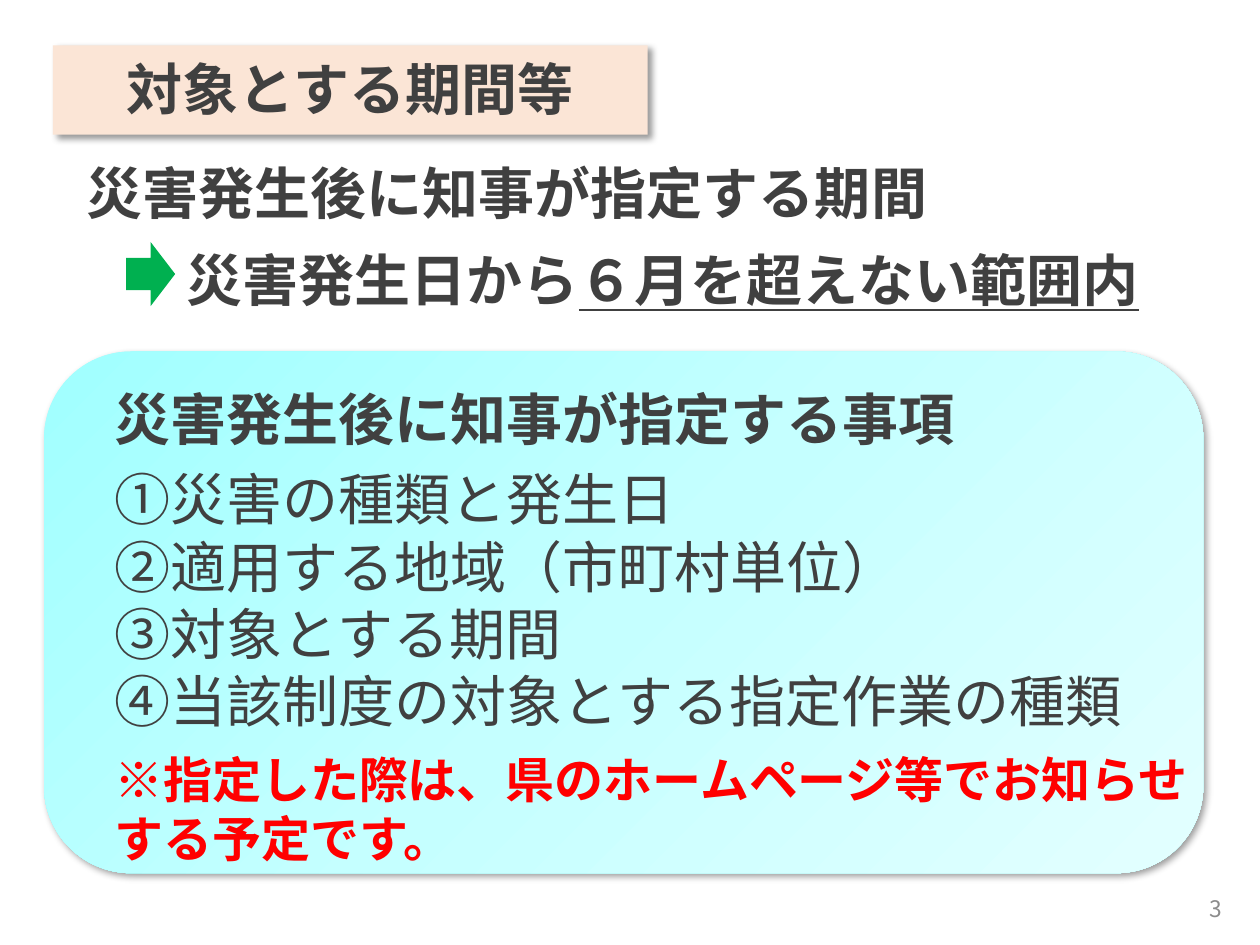
import copy
from dataclasses import dataclass

from lxml import etree
from pptx import Presentation
from pptx import util as u
from pptx.dml.color import RGBColor
from pptx.enum import shapes, text
from pptx.oxml.ns import qn


@dataclass(frozen=True)
class Theme:
    font: str = "Noto Sans CJK JP"
    ink: str = "404040"
    alert: str = "FF0000"
    muted: str = "8C8C8C"
    heading_fill: str = "FBE5D6"
    arrow_fill: str = "00B050"
    panel_stops: tuple = ((0, "A0FFFF"), (0.5, "C5FFFF"), (1, "E3FFFF"))
    large: int = 32
    note: int = 28
    small: int = 13
    leading: float = 1.2


THEME = Theme()

# Content: a paragraph is a list of (words, underlined) runs
HEADING = [[("対象とする期間等", False)]]
PERIOD = [[("災害発生後に知事が指定する期間", False)]]
LIMIT = [[("災害発生日から", False), ("６月を超えない範囲内", True)]]
MATTERS_TITLE = [[("災害発生後に知事が指定する事項", False)]]
MATTERS = [[(item, False)] for item in (
    "①災害の種類と発生日",
    "②適用する地域（市町村単位）",
    "③対象とする期間",
    "④当該制度の対象とする指定作業の種類",
)]
NOTE = [[("※指定した際は、県のホームページ等でお知らせする予定です。", False)]]
PAGE = [[("3", False)]]

# Layout: the panel's three texts share a left edge and follow one another
WIDTH, HEIGHT = 10, 7.5
PANEL = (0.35, 2.79, 9.2, 4.14)
PANEL_TEXT_LEFT, PANEL_TEXT_WIDTH = 0.81, 8.73
LINE_BOX, LIST_BOX, NOTE_BOX = 0.64, 2.26, 1.04
MATTERS_TOP = 3
LIST_TOP = MATTERS_TOP + LINE_BOX
NOTE_TOP = LIST_TOP + LIST_BOX


def rgb(code):
    return RGBColor.from_string(code)


def place(part, box):
    part.left, part.top, part.width, part.height = map(u.Inches, box)


def write(part, paragraphs, size=THEME.large, color=THEME.ink, bold=True,
          align=text.PP_ALIGN.LEFT, anchor=text.MSO_ANCHOR.TOP,
          leading=THEME.leading, right_inset=0.1):
    frame = part.text_frame
    frame.word_wrap = True
    frame.auto_size = text.MSO_AUTO_SIZE.NONE
    frame.vertical_anchor = anchor
    frame.margin_right = u.Inches(right_inset)
    for i, runs in enumerate(paragraphs):
        paragraph = frame.add_paragraph() if i else frame.paragraphs[0]
        paragraph.alignment = align
        paragraph.line_spacing = u.Pt(size * leading)
        paragraph.space_before = u.Pt(0)
        for words, underlined in runs:
            run = paragraph.add_run()
            run.text = words
            font = run.font
            font.size, font.bold, font.name = u.Pt(size), bold, THEME.font
            font.color.rgb = rgb(color)
            if underlined:
                font.underline = True
            etree.SubElement(run._r.get_or_add_rPr(), qn("a:ea"), typeface=THEME.font)


def add_text(slide, box, paragraphs, **fmt):
    write(slide.shapes.add_textbox(*map(u.Inches, box)), paragraphs, **fmt)


def add_shape(slide, kind, box):
    part = slide.shapes.add_shape(kind, *map(u.Inches, box))
    part.line.fill.background()
    part.shadow.inherit = False
    return part


def cast_shadow(part):
    effects = part._element.spPr.find(qn("a:effectLst"))
    if effects is None:
        effects = etree.SubElement(part._element.spPr, qn("a:effectLst"))
    shadow = etree.SubElement(effects, qn("a:outerShdw"), blurRad=str(u.Pt(4)),
                              dist=str(u.Pt(3)), dir=str(45 * 60000),
                              algn="tl", rotWithShape="0")
    black = etree.SubElement(shadow, qn("a:srgbClr"), val="000000")
    etree.SubElement(black, qn("a:alpha"), val="40000")


def fill_gradient(part, stops):
    part.fill.gradient()
    part.fill.gradient_angle = 315
    stop_list = part._element.spPr.find(".//" + qn("a:gsLst"))
    stop_list.insert(1, copy.deepcopy(stop_list[0]))
    for stop, (position, color) in zip(part.fill.gradient_stops, stops):
        stop.position = position
        stop.color.rgb = rgb(color)


def main():
    prs = Presentation()
    prs.slide_width, prs.slide_height = u.Inches(WIDTH), u.Inches(HEIGHT)
    slide = prs.slides.add_slide(prs.slide_layouts[1])
    heading, matters = slide.placeholders

    # Panel, behind all the text
    panel = add_shape(slide, shapes.MSO_SHAPE.ROUNDED_RECTANGLE, PANEL)
    fill_gradient(panel, THEME.panel_stops)
    cast_shadow(panel)
    slide.shapes._spTree.insert(2, panel._element)

    # Heading: the title as a rounded label
    place(heading, (0.42, 0.36, 4.72, 0.71))
    outline = etree.SubElement(heading._element.spPr, qn("a:prstGeom"), prst="roundRect")
    etree.SubElement(outline, qn("a:avLst"))
    heading.fill.solid()
    heading.fill.fore_color.rgb = rgb(THEME.heading_fill)
    cast_shadow(heading)
    write(heading, HEADING, align=text.PP_ALIGN.CENTER,
          anchor=text.MSO_ANCHOR.MIDDLE, leading=1.125)

    # Period and its limit
    add_text(slide, (0.59, 1.21, 7.67, LINE_BOX), PERIOD)
    add_text(slide, (1.38, 1.9, 8.35, LINE_BOX), LIMIT)
    arrow = add_shape(slide, shapes.MSO_SHAPE.RIGHT_ARROW, (1, 1.92, 0.39, 0.51))
    arrow.fill.solid()
    arrow.fill.fore_color.rgb = rgb(THEME.arrow_fill)

    # Matters to be designated
    add_text(slide, (PANEL_TEXT_LEFT, MATTERS_TOP, PANEL_TEXT_WIDTH, LINE_BOX), MATTERS_TITLE)
    place(matters, (PANEL_TEXT_LEFT, LIST_TOP, PANEL_TEXT_WIDTH, LIST_BOX))
    write(matters, MATTERS, bold=False)
    for paragraph in matters.text_frame.paragraphs:
        props = paragraph._p.get_or_add_pPr()
        props.set("marL", "0")
        props.set("indent", "0")
        etree.SubElement(props, qn("a:buNone"))
    add_text(slide, (PANEL_TEXT_LEFT, NOTE_TOP, PANEL_TEXT_WIDTH, NOTE_BOX), NOTE,
             size=THEME.note, color=THEME.alert, right_inset=0)

    # Page number
    add_text(slide, (7.55, 7.01, 2.25, 0.4), PAGE, size=THEME.small, color=THEME.muted,
             bold=False, align=text.PP_ALIGN.RIGHT, anchor=text.MSO_ANCHOR.MIDDLE)

    prs.save("out.pptx")


if __name__ == "__main__":
    main()
